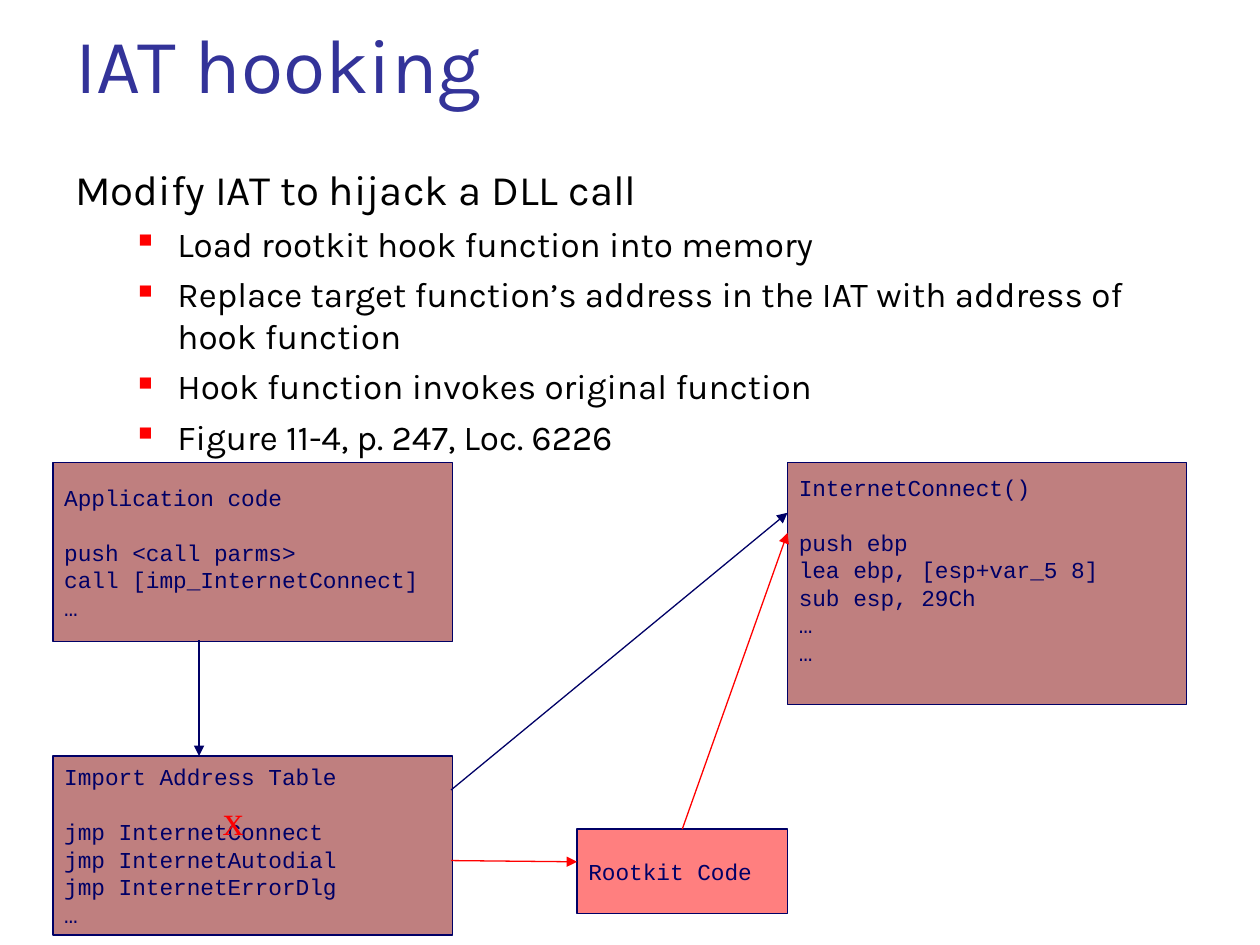
"""Build the IAT hooking slide with its call-flow diagram."""
from lxml.etree import SubElement
from pptx import Presentation
from pptx.dml.color import RGBColor
from pptx.enum.shapes import MSO_CONNECTOR, MSO_SHAPE
from pptx.enum.text import MSO_ANCHOR, PP_ALIGN
from pptx.oxml.ns import qn
from pptx.util import Inches, Pt

BLACK = RGBColor(0x00, 0x00, 0x00)
NAVY = RGBColor(0x00, 0x00, 0x66)
INDIGO = RGBColor(0x33, 0x33, 0x99)
MAROON = RGBColor(0x80, 0x00, 0x00)
RED = RGBColor(0xFF, 0x00, 0x00)

CODE_LINE = Pt(15.7)
BLOCK_WIDTH = 3.17

STEPS = [
    "Load rootkit hook function into memory",
    "Replace target function’s address in the IAT with address of hook function",
    "Hook function invokes original function",
    "Figure 11-4, p. 247, Loc. 6226",
]
APPLICATION = ["Application code", "push <call parms>", "call [imp_InternetConnect]", "…"]
IMPORT_TABLE = ["Import Address Table", "jmp InternetConnect", "jmp InternetAutodial",
                "jmp InternetErrorDlg", "…"]
TARGET = ["InternetConnect()", "push ebp", "lea ebp, [esp+var_5 8]", "sub esp, 29Ch", "…", "…"]


def write(para, text, size, color, font="Karla", before=0):
    """Put formatted text into a paragraph."""
    para.alignment = PP_ALIGN.LEFT
    para.space_before = Pt(before)
    span = para.add_run()
    span.text = text
    span.font.name = font
    span.font.size = Pt(size)
    span.font.color.rgb = color


def add_bullet(para):
    """Give a paragraph a small red square and a hanging indent."""
    properties = para._p.get_or_add_pPr()
    properties.set("marL", str(Inches(0.81)))
    properties.set("indent", str(Inches(-0.31)))
    color = SubElement(properties, qn("a:buClr"))
    SubElement(color, qn("a:srgbClr"), val=str(RED))
    SubElement(properties, qn("a:buSzPct"), val="55000")
    SubElement(properties, qn("a:buChar"), char="■")


def add_text_box(page, left, top, width, height, anchor=MSO_ANCHOR.TOP, wrap=True):
    """Add an empty text box and return its text frame."""
    frame = page.shapes.add_textbox(
        Inches(left), Inches(top), Inches(width), Inches(height)).text_frame
    frame.word_wrap = wrap
    frame.vertical_anchor = anchor
    return frame


def add_code_block(page, lines, left, top, width, height, fill=MAROON, bottom=0.05):
    """Add a half-transparent box with a heading line and code below it."""
    box = page.shapes.add_shape(
        MSO_SHAPE.RECTANGLE, Inches(left), Inches(top), Inches(width), Inches(height))
    box.shadow.inherit = False
    box.fill.solid()
    box.fill.fore_color.rgb = fill
    tint = box._element.spPr.find(qn("a:solidFill")).find(qn("a:srgbClr"))
    SubElement(tint, qn("a:alpha"), val="50000")
    box.line.color.rgb = NAVY
    box.line.width = Pt(0.75)
    frame = box.text_frame
    frame.word_wrap = True
    frame.vertical_anchor = MSO_ANCHOR.MIDDLE
    frame.margin_left = frame.margin_right = Inches(0.09)
    frame.margin_bottom = Inches(bottom)
    for index, line in enumerate(lines):
        para = frame.add_paragraph() if index else frame.paragraphs[0]
        write(para, line, 13, NAVY, "Courier New")
        para.line_spacing = CODE_LINE
    if len(lines) > 1:
        frame.paragraphs[0].space_after = CODE_LINE
    return box


def add_arrow(page, start, end, color):
    """Add a thin arrow between two points."""
    arrow = page.shapes.add_connector(
        MSO_CONNECTOR.STRAIGHT, *[Inches(value) for value in (*start, *end)])
    arrow.line.color.rgb = color
    arrow.line.width = Pt(0.75)
    SubElement(arrow.line._get_or_add_ln(), qn("a:tailEnd"), type="triangle")
    SubElement(arrow._element.spPr, qn("a:effectLst"))
    return arrow


def add_outline(page):
    """Add the title, the statement and its bulleted steps."""
    title = add_text_box(page, 0.5, 0.23, 9.2, 0.68, MSO_ANCHOR.BOTTOM)
    write(title.paragraphs[0], "IAT hooking", 44, INDIGO)
    body = add_text_box(page, 0.5, 1.25, 9.17, 5.46)
    write(body.paragraphs[0], "Modify IAT to hijack a DLL call", 24, BLACK, before=5.6)
    for step in STEPS:
        para = body.add_paragraph()
        para.level = 1
        write(para, step, 20, BLACK, before=4.7)
        add_bullet(para)


def add_diagram(page):
    """Add the code blocks, the cross and the arrows of the call flow."""
    add_code_block(page, APPLICATION, 0.42, 3.67, BLOCK_WIDTH, 1.42)
    add_code_block(page, IMPORT_TABLE, 0.42, 6, BLOCK_WIDTH, 1.42)
    cross = add_text_box(page, 1.67, 6.25, 0.35, 0.5, wrap=False)
    write(cross.paragraphs[0], "x", 24, RED, "Times New Roman")
    add_arrow(page, (1.58, 5.08), (1.58, 6), NAVY)
    add_arrow(page, (3.58, 6.27), (6.25, 4.07), NAVY)
    rootkit = add_code_block(page, ["Rootkit Code"], 4.58, 6.58, 1.67, 0.67, RED)
    add_code_block(page, TARGET, 6.25, 3.67, BLOCK_WIDTH, 1.92, bottom=0.27)
    add_arrow(page, (3.58, 6.83), (4.58, 6.84), RED)
    add_arrow(page, (5.42, 6.58), (6.25, 4.23), RED).begin_connect(rootkit, 0)


def main():
    """Create the deck and save it."""
    deck = Presentation()
    deck.slide_width, deck.slide_height = Inches(10), Inches(7.5)
    page = deck.slides.add_slide(deck.slide_layouts[6])
    add_outline(page)
    add_diagram(page)
    deck.save("out.pptx")


if __name__ == "__main__":
    main()
